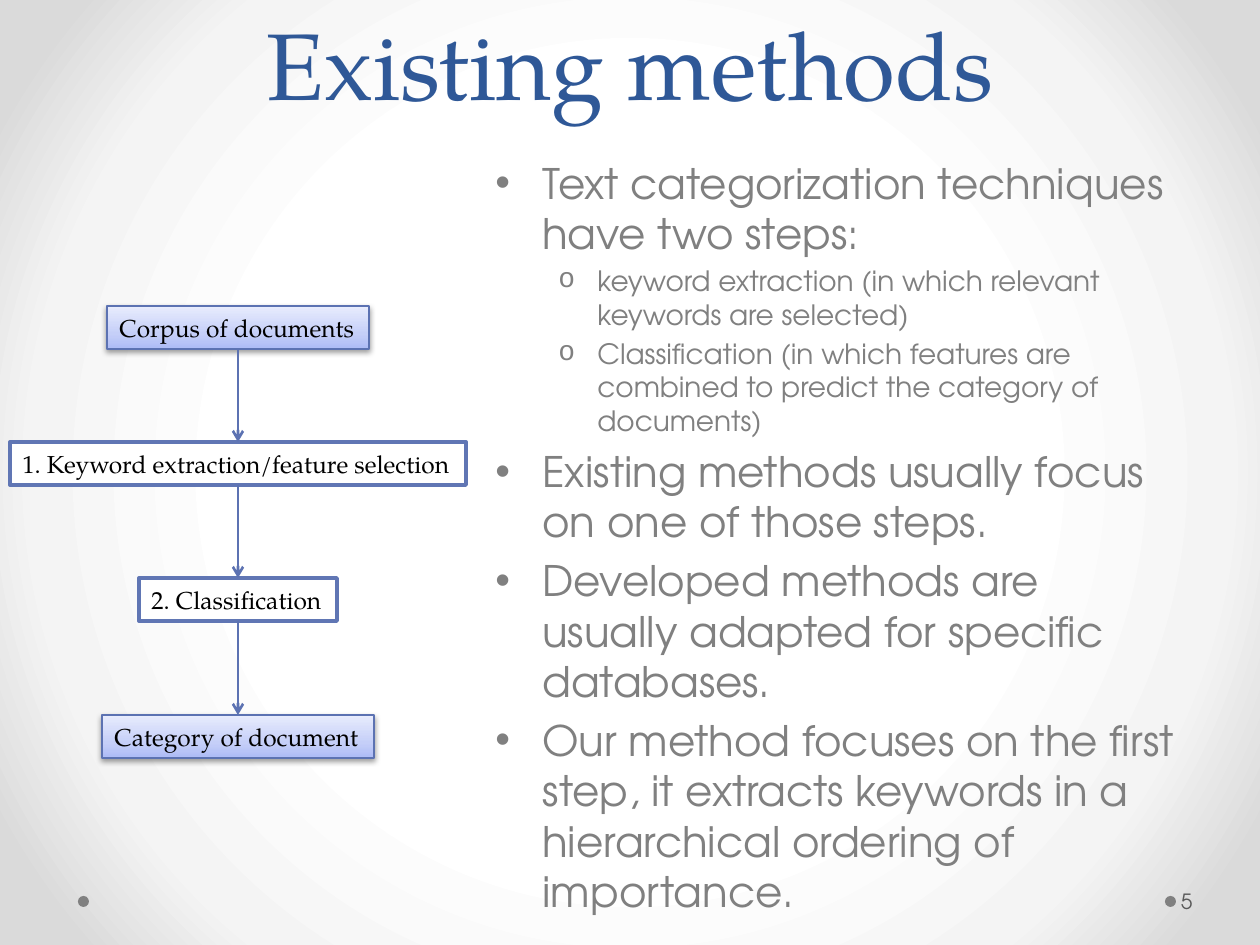
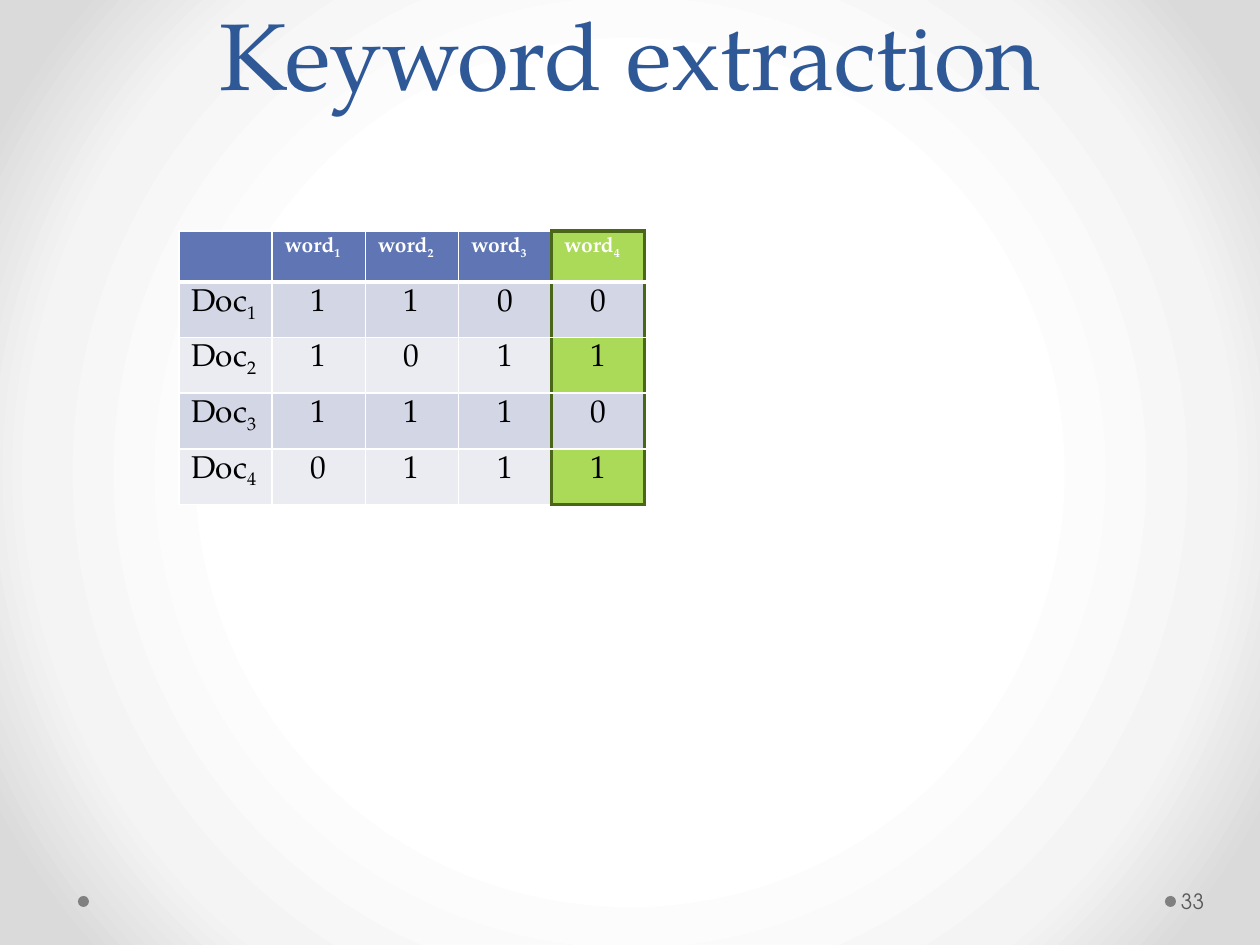
"""Builds two slides on keyword extraction for text categorization."""
from lxml import etree
from pptx import Presentation
from pptx.dml.color import RGBColor
from pptx.enum.shapes import MSO_CONNECTOR, MSO_SHAPE
from pptx.enum.text import MSO_ANCHOR, MSO_AUTO_SIZE, PP_ALIGN
from pptx.oxml import parse_xml
from pptx.oxml.ns import nsdecls, qn
from pptx.util import Emu, Pt

RECTANGLE, OVAL = MSO_SHAPE.RECTANGLE, MSO_SHAPE.OVAL
STRAIGHT = MSO_CONNECTOR.STRAIGHT
LEFT, CENTER = PP_ALIGN.LEFT, PP_ALIGN.CENTER
MIDDLE, BOTTOM = MSO_ANCHOR.MIDDLE, MSO_ANCHOR.BOTTOM
GROW, FIXED = MSO_AUTO_SIZE.SHAPE_TO_FIT_TEXT, MSO_AUTO_SIZE.NONE
BOTTOM_SITE, TOP_SITE = 2, 0
TITLE_ONLY = 5

SCALE = 914400 / 126
SERIF, SANS = "TeX Gyre Pagella", "TeX Gyre Adventor"
COLOURS = {
    "title": "2F5897", "grey": "808080", "number": "595959",
    "black": "000000", "white": "FFFFFF",
    "accent": "6076B4", "edge": "5C72B2",
    "odd_row": "D2D6E5", "even_row": "EAECF2",
    "chosen": "ABD958", "chosen_edge": "4A6717",
}
BACKDROP_STOPS = [(50, "FFFFFF"), (76, "F4F4F4"), (92, "DADADA")]
BACKDROP_PATH = ('<a:path path="circle"><a:fillToRect l="50000" t="50000" '
                 'r="50000" b="50000"/></a:path>')
END_STOPS = [(0, "ADBBF6"), (35, "C5CFF8"), (100, "E8ECFD")]
UPWARD = '<a:lin ang="16200000" scaled="0"/>'

BULLET_LEVELS = [
    {"mark": "•", "face": "Arial", "margin": 47, "hang": 47, "size": 24},
    {"mark": "o", "face": "Courier New", "margin": 102, "hang": 39, "size": 16},
]
METHOD_POINTS = [
    (0, "Text categorization techniques have two steps:"),
    (1, "keyword extraction (in which relevant keywords are selected)"),
    (1, "Classification (in which features are combined to predict the "
        "category of documents)"),
    (0, "Existing methods usually focus on one of those steps."),
    (0, "Developed methods are usually adapted for specific databases."),
    (0, "Our method focuses on the first step, it extracts keywords in a "
        "hierarchical ordering of importance."),
]
FLOW_STEPS = [
    ("Corpus of documents", 262, True),
    ("1. Keyword extraction/feature selection", 456, False),
    ("2. Classification", 198, False),
    ("Category of document", 272, True),
]
STEP_HEIGHT = 43
WORD_COUNTS = [[1, 1, 0, 0], [1, 0, 1, 1], [1, 1, 1, 0], [0, 1, 1, 1]]


def px(length):
    """Turn whole pixels into EMU."""
    return Emu(round(length * SCALE))


def place(*lengths):
    """Turn a box of pixels into EMU."""
    return [px(length) for length in lengths]


def colour(name):
    """Look up a named colour."""
    return RGBColor.from_string(COLOURS[name])


def style(font, face, size, ink, bold=False):
    """Set the look of a font."""
    font.name, font.size, font.bold = face, Pt(size), bold
    font.color.rgb = colour(ink)


def set_gradient(fill, holder, stops, direction):
    """Give a fill's holder a gradient with any number of stops."""
    fill.solid()
    marks = "".join(f'<a:gs pos="{position * 1000}"><a:srgbClr val="{tint}"/></a:gs>'
                    for position, tint in stops)
    gradient = parse_xml(f'<a:gradFill {nsdecls("a")} rotWithShape="1"><a:gsLst>'
                         f'{marks}</a:gsLst>{direction}</a:gradFill>')
    holder.replace(holder.find(qn("a:solidFill")), gradient)


def set_backdrop(master):
    """Give every slide the radial backdrop."""
    fill = master.background.fill
    fill.solid()
    holder = next(master.element.iter(qn("p:bgPr")))
    set_gradient(fill, holder, BACKDROP_STOPS, BACKDROP_PATH)


def add_footer(page, number):
    """Add the two dots and the page number."""
    for left in (78, 1165):
        dot = page.shapes.add_shape(OVAL, *place(left, 896, 11, 11))
        dot.shadow.inherit = False
        dot.fill.solid()
        dot.fill.fore_color.rgb = colour("grey")
        dot.line.fill.background()
    frame = page.shapes.add_textbox(*place(1177, 876, 77, 50)).text_frame
    frame.word_wrap = True
    frame.vertical_anchor = MIDDLE
    frame.margin_left, frame.margin_right = px(4), px(6)
    para = frame.paragraphs[0]
    para.text = str(number)
    style(para.font, SANS, 12, "number")


def add_page(deck, title, title_height, number):
    """Add a slide with its title and footer."""
    page = deck.slides.add_slide(deck.slide_layouts[TITLE_ONLY])
    heading = page.shapes.title
    heading.left, heading.top, heading.width, heading.height = place(
        63, 0, 1134, title_height)
    frame = heading.text_frame
    frame.auto_size = FIXED
    frame.vertical_anchor = BOTTOM
    para = frame.paragraphs[0]
    para.text = title
    para.alignment = CENTER
    para.line_spacing = Pt(58)
    style(para.font, SERIF, 54, "title")
    add_footer(page, number)
    return page


def add_bullets(page, box, points):
    """Fill a box with a two-level bullet list."""
    frame = page.shapes.add_textbox(*place(*box)).text_frame
    frame.word_wrap = True
    for index, (depth, words) in enumerate(points):
        para = frame.paragraphs[0] if index == 0 else frame.add_paragraph()
        level = BULLET_LEVELS[depth]
        para.text = words
        para.level = depth
        para.space_before = Pt(level["size"] * 0.2)
        settings = para._p.get_or_add_pPr()
        settings.set("marL", str(px(level["margin"])))
        settings.set("indent", str(-px(level["hang"])))
        etree.SubElement(settings, qn("a:buFont"), typeface=level["face"])
        etree.SubElement(settings, qn("a:buChar"), char=level["mark"])
        style(para.font, SANS, level["size"], "grey")


def add_step(page, box, label, is_end):
    """Add one box of the flow, raised when it is an end of it."""
    step = page.shapes.add_shape(RECTANGLE, *place(*box))
    step.shadow.inherit = False
    if is_end:
        holder = step.element.spPr
        set_gradient(step.fill, holder, END_STOPS, UPWARD)
        holder.find(qn("a:effectLst")).append(parse_xml(
            f'<a:outerShdw {nsdecls("a")} blurRad="40000" dist="20000" '
            'dir="5400000" rotWithShape="0"><a:srgbClr val="000000">'
            '<a:alpha val="38000"/></a:srgbClr></a:outerShdw>'))
    else:
        step.fill.solid()
        step.fill.fore_color.rgb = colour("white")
    step.line.color.rgb = colour("edge" if is_end else "accent")
    step.line.width = Pt(0.75 if is_end else 2.25)
    frame = step.text_frame
    frame.word_wrap = False
    frame.auto_size = GROW
    para = frame.paragraphs[0]
    para.text = label
    para.alignment = LEFT
    style(para.font, SERIF, 14, "black")
    return step


def add_arrow(page, upper, lower):
    """Join two steps with an arrow."""
    arrow = page.shapes.add_connector(STRAIGHT, 0, 0, 0, 0)
    arrow.begin_connect(upper, BOTTOM_SITE)
    arrow.end_connect(lower, TOP_SITE)
    arrow.line.color.rgb = colour("edge")
    arrow.line.width = Pt(1.5)
    holder = arrow.element.spPr
    etree.SubElement(holder.find(qn("a:ln")), qn("a:tailEnd"), type="arrow")
    etree.SubElement(holder, qn("a:effectLst"))


def add_flow(page, box, steps):
    """Spread the steps down a box, centred, and join them."""
    left, top, width, height = box
    travel, gaps = height - STEP_HEIGHT, len(steps) - 1
    drawn = [
        add_step(page, (left + (width - step_width) // 2,
                        top + travel * index // gaps, step_width, STEP_HEIGHT),
                 label, is_end)
        for index, (label, step_width, is_end) in enumerate(steps)
    ]
    for upper, lower in zip(drawn, drawn[1:]):
        add_arrow(page, upper, lower)


def cell_borders(row, column, last):
    """Give the colour and width of a cell's left, right, top and bottom."""
    plain, heavy, chosen = ("white", 1), ("white", 3), ("chosen_edge", 2.25)
    in_chosen = column == last
    return {
        "L": chosen if in_chosen else plain,
        "R": chosen if column >= last - 1 else plain,
        "T": chosen if in_chosen and row == 0 else heavy if row == 1 else plain,
        "B": heavy if row == 0 else chosen if in_chosen and row == last else plain,
    }


def format_cell(cell, borders, fill):
    """Draw a cell's borders and fill."""
    settings = cell._tc.get_or_add_tcPr()
    for side, (ink, width) in borders.items():
        settings.append(parse_xml(
            f'<a:ln{side} {nsdecls("a")} w="{Pt(width)}"><a:solidFill>'
            f'<a:srgbClr val="{COLOURS[ink]}"/></a:solidFill></a:ln{side}>'))
    cell.fill.solid()
    cell.fill.fore_color.rgb = colour(fill)


def write_indexed(para, word, index):
    """Write a word with a subscript."""
    para.add_run().text = word
    span = para.add_run()
    span.text = str(index)
    span._r.get_or_add_rPr().set("baseline", "-25000")


def add_word_table(page, box, counts):
    """Add the document by word table with its last word chosen."""
    last = len(counts)
    table = page.shapes.add_table(last + 1, last + 1, *place(*box)).table
    table.first_row = table.horz_banding = False
    for row in range(last + 1):
        for column in range(last + 1):
            cell = table.cell(row, column)
            para = cell.text_frame.paragraphs[0]
            fill = "accent" if row == 0 else "odd_row" if row % 2 else "even_row"
            if column == last and (row == 0 or counts[row - 1][-1]):
                fill = "chosen"
            format_cell(cell, cell_borders(row, column, last), fill)
            if row == 0:
                style(para.font, SERIF, 12, "white", bold=True)
                if column:
                    write_indexed(para, "word", column)
                continue
            style(para.font, SERIF, 18, "black")
            if column == 0:
                write_indexed(para, "Doc", row)
            else:
                para.add_run().text = str(counts[row - 1][column - 1])
                para.alignment = CENTER


def main():
    """Build and save the deck."""
    deck = Presentation()
    deck.slide_width, deck.slide_height = place(1260, 945)
    set_backdrop(deck.slide_master)

    methods = add_page(deck, "Existing methods", 126, 5)
    add_bullets(methods, (483, 151, 714, 709), METHOD_POINTS)
    add_flow(methods, (10, 306, 456, 452), FLOW_STEPS)

    extraction = add_page(deck, "Keyword extraction", 116, 33)
    add_word_table(extraction, (179, 231, 466, 255), WORD_COUNTS)

    deck.save("out.pptx")


if __name__ == "__main__":
    main()
